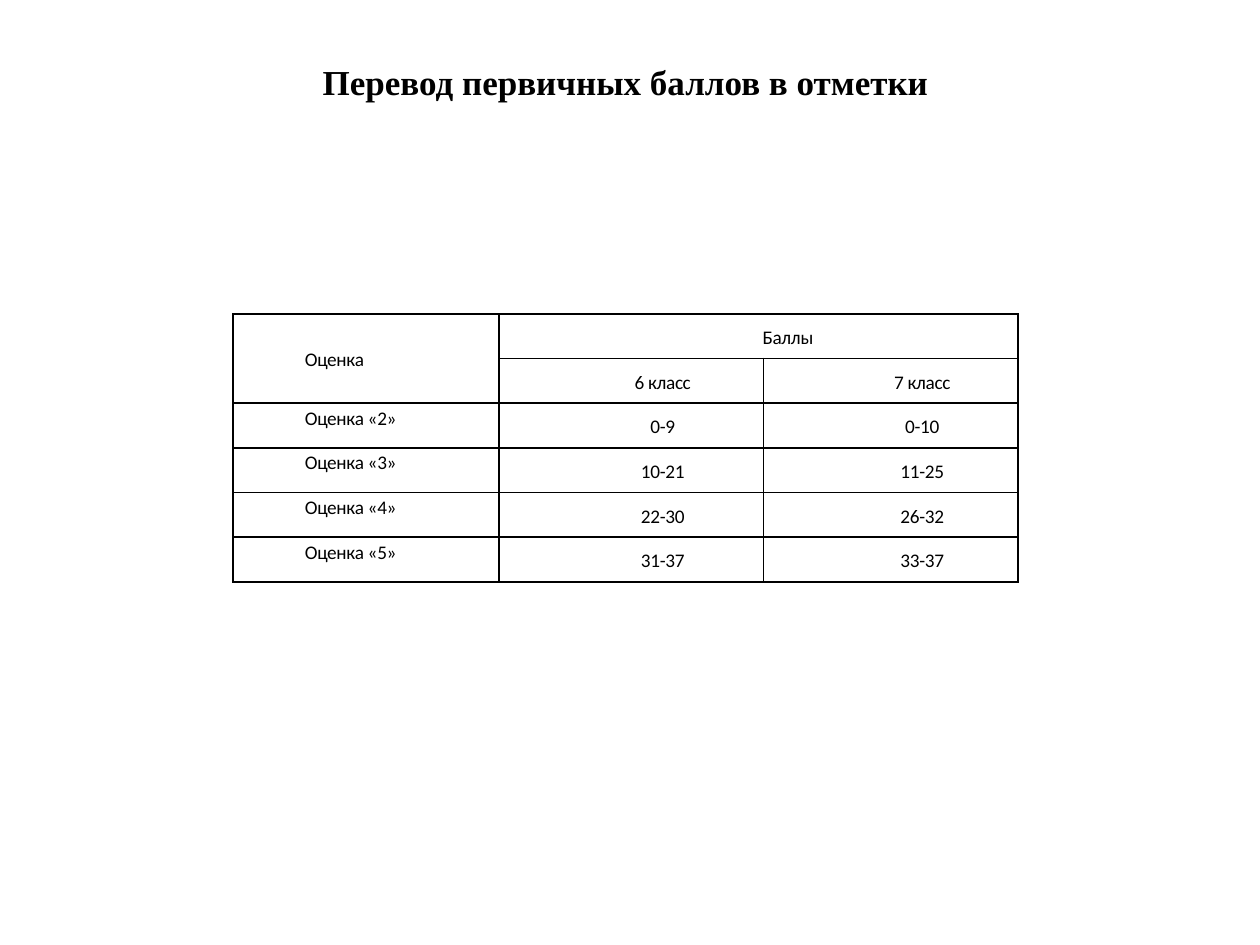
from dataclasses import dataclass

from lxml.etree import SubElement as Sub
from pptx import Presentation
from pptx.dml.color import RGBColor as Rgb
from pptx.enum.text import MSO_ANCHOR as Anchor, PP_ALIGN as Align
from pptx.oxml.ns import qn
from pptx.util import Inches, Pt


@dataclass(frozen=True)
class Theme:
    ink: str = "000000"
    head: str = "Times New Roman"
    body: str = "Calibri"
    head_size: float = 20
    body_size: float = 11
    line: float = 1


@dataclass(frozen=True)
class Grade:
    name: str
    sixth: str
    seventh: str


THEME = Theme()
GRADES = [
    Grade("Оценка «2»", "0-9", "0-10"),
    Grade("Оценка «3»", "10-21", "11-25"),
    Grade("Оценка «4»", "22-30", "26-32"),
    Grade("Оценка «5»", "31-37", "33-37"),
]
WIDTHS = [2.11, 2.1, 2.02]
ROW = 0.355


def write(frame, text: str, *, font: str = THEME.body,
          size: float = THEME.body_size, bold: bool = False,
          align=Align.CENTER, indent: float = 0, space: float | None = None,
          after: float = 0, track: float = 0) -> None:
    """Fill the frame with one formatted paragraph; track is in points."""
    par = frame.paragraphs[0]
    par.alignment = align
    par.space_after = Pt(after)
    if space:
        par.line_spacing = space
    if indent:
        props = par._p.get_or_add_pPr()
        props.set("marL", str(Inches(indent)))
        props.set("indent", "0")
    run = par.add_run()
    run.text = text
    run.font.name = font
    run.font.size = Pt(size)
    run.font.bold = bold
    run.font.color.rgb = Rgb.from_string(THEME.ink)
    if track:
        run._r.get_or_add_rPr().set("spc", str(round(track * 100)))


def border(cell) -> None:
    props = cell._tc.get_or_add_tcPr()
    for side in ("lnL", "lnR", "lnT", "lnB"):
        line = Sub(props, qn(f"a:{side}"), w=str(Pt(THEME.line)))
        Sub(Sub(line, qn("a:solidFill")), qn("a:srgbClr"), val=THEME.ink)


def put(cell, text: str, align=Align.CENTER, anchor=Anchor.MIDDLE) -> None:
    cell.margin_left = cell.margin_right = Inches(0.07)
    cell.margin_top = cell.margin_bottom = 0
    cell.vertical_anchor = anchor
    write(cell.text_frame, text, align=align, indent=0.5, space=1.15,
          after=10, track=-0.2)


def add_title(slide) -> None:
    box = slide.shapes.add_textbox(Inches(0.5), Inches(0.3), Inches(9), Inches(0.69))
    frame = box.text_frame
    frame.word_wrap = True
    frame.vertical_anchor = Anchor.MIDDLE
    write(frame, "Перевод первичных баллов в отметки ", font=THEME.head,
          size=THEME.head_size, bold=True)


def add_scores(slide) -> None:
    count = len(GRADES) + 2
    table = slide.shapes.add_table(
        count, len(WIDTHS), Inches(1.85), Inches(2.49),
        Inches(sum(WIDTHS)), Inches(ROW * count)).table
    table.first_row = table.horz_banding = False
    for col, width in zip(table.columns, WIDTHS):
        col.width = Inches(width)
    for row in table.rows:
        row.height = Inches(ROW)
    for cell in table.iter_cells():
        border(cell)
        cell.fill.background()

    table.cell(0, 0).merge(table.cell(1, 0))
    table.cell(0, 1).merge(table.cell(0, 2))
    put(table.cell(0, 0), "Оценка", Align.LEFT)
    put(table.cell(0, 1), "Баллы ")
    put(table.cell(1, 1), "6 класс")
    put(table.cell(1, 2), "7 класс")
    for row, grade in enumerate(GRADES, 2):
        put(table.cell(row, 0), grade.name, Align.JUSTIFY, Anchor.TOP)
        put(table.cell(row, 1), grade.sixth)
        put(table.cell(row, 2), grade.seventh)


def main() -> None:
    deck = Presentation()
    deck.slide_width, deck.slide_height = Inches(10), Inches(7.5)
    slide = deck.slides.add_slide(deck.slide_layouts[6])
    add_scores(slide)
    add_title(slide)
    deck.save("out.pptx")


if __name__ == "__main__":
    main()
